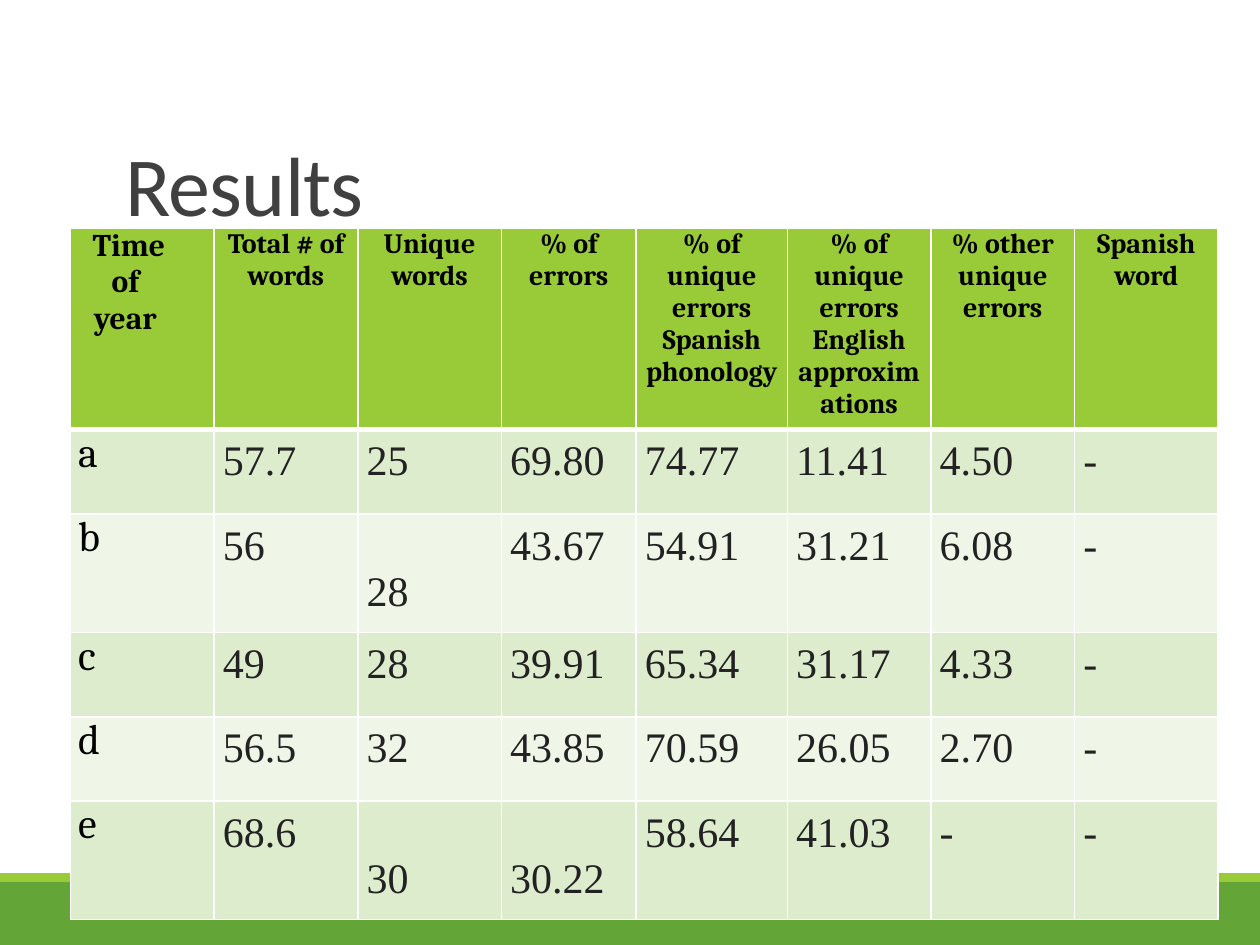
from lxml.etree import SubElement
from pptx import Presentation
from pptx.dml.color import RGBColor
from pptx.enum.shapes import MSO_SHAPE
from pptx.enum.text import MSO_ANCHOR, PP_ALIGN
from pptx.oxml.ns import qn
from pptx.util import Inches, Pt

COLORS = {
    "green": "63A537",
    "lime": "99CB38",
    "title": "404040",
    "black": "000000",
    "number": "222222",
    "odd": "DEECCE",
    "even": "EFF6E8",
    "border": "FFFFFF",
}
FORMATS = {
    "title": {"name": "Calibri", "size": Pt(48), "bold": False, "color": "title"},
    "corner": {"name": "Cambria", "size": Pt(18), "bold": True, "color": "black"},
    "header": {"name": "Cambria", "size": Pt(16), "bold": True, "color": "black"},
    "label": {"name": "Cambria", "size": Pt(24), "bold": False, "color": "black"},
    "number": {"name": "Times New Roman", "size": Pt(24), "bold": False, "color": "number"},
}
MARGINS = {
    "corner": (0.06, 0, 0.33, 0),
    "header": (0.06, 0, 0.06, 0),
    "label": (0.06, 0, 0.06, 0),
    "number": (0.07, 0.07, 0.07, 0.07),
}
HEADERS = [
    " Time of year",
    "Total # of words",
    "Unique words",
    "% of errors",
    "% of unique errors\nSpanish phonology",
    "% of unique errors English approximations",
    "% other unique errors",
    "Spanish word",
]
RESULTS = [
    ["a", "57.7", "25", "69.80", "74.77", "11.41", "4.50", "-"],
    ["b", "56", "28", "43.67", "54.91", "31.21", "6.08", "-"],
    ["c", "49", "28", "39.91", "65.34", "31.17", "4.33", "-"],
    ["d", "56.5", "32", "43.85", "70.59", "26.05", "2.70", "-"],
    ["e", "68.6", "30", "30.22", "58.64", "41.03", "-", "-"],
]
COLUMN_WIDTHS = [1.14, 1.14, 1.14, 1.07, 1.2, 1.14, 1.14, 1.14]
ROW_HEIGHTS = [1.27] + [0.67] * len(RESULTS)
DOUBLE_SPACED = {(2, 2), (5, 2), (5, 3)}


class SlideBuilder:
    """Holds the style and the current slide, and adds each kind of element."""

    def __init__(self, slide, colors, formats):
        self.slide = slide
        self.colors = colors
        self.formats = formats

    def rgb(self, color):
        return RGBColor.from_string(self.colors[color])

    def style(self, font, role):
        for attribute, value in self.formats[role].items():
            if attribute == "color":
                font.color.rgb = self.rgb(value)
            else:
                setattr(font, attribute, value)

    def band(self, top, height, color):
        shape = self.slide.shapes.add_shape(
            MSO_SHAPE.RECTANGLE, 0, Inches(top), Inches(10), Inches(height)
        )
        shape.shadow.inherit = False
        shape.fill.solid()
        shape.fill.fore_color.rgb = self.rgb(color)
        shape.line.fill.background()

    def title(self, text, left, top, width, height):
        box = self.slide.shapes.add_textbox(
            Inches(left), Inches(top), Inches(width), Inches(height)
        )
        frame = box.text_frame
        frame.word_wrap = True
        frame.vertical_anchor = MSO_ANCHOR.BOTTOM
        paragraph = frame.paragraphs[0]
        paragraph.line_spacing = 0.85
        run = paragraph.add_run()
        run.text = text
        self.style(run.font, "title")
        run.font._element.set("spc", "-50")

    def borders(self, cell, widths):
        properties = cell._tc.get_or_add_tcPr()
        for index, (side, width) in enumerate(widths.items()):
            line = SubElement(properties, qn(f"a:ln{side}"), w=str(Pt(width)))
            fill = SubElement(line, qn("a:solidFill"))
            SubElement(fill, qn("a:srgbClr"), val=self.colors["border"])
            properties.insert(index, line)

    def cell(self, cell, text, role, fill, spacing):
        margins = zip(("left", "top", "right", "bottom"), MARGINS[role])
        for side, margin in margins:
            setattr(cell, f"margin_{side}", Inches(margin))
        cell.fill.solid()
        cell.fill.fore_color.rgb = self.rgb(fill)
        cell.text = text
        centered = role in ("corner", "header")
        for paragraph in cell.text_frame.paragraphs:
            paragraph.alignment = PP_ALIGN.CENTER if centered else PP_ALIGN.LEFT
            if spacing:
                paragraph.line_spacing = spacing
            for run in paragraph.runs:
                self.style(run.font, role)

    def table(self, rows, left, top):
        table = self.slide.shapes.add_table(
            len(rows), len(COLUMN_WIDTHS), Inches(left), Inches(top),
            Inches(sum(COLUMN_WIDTHS)), Inches(sum(ROW_HEIGHTS)),
        ).table
        for column, width in zip(table.columns, COLUMN_WIDTHS):
            column.width = Inches(width)
        for row, height in zip(table.rows, ROW_HEIGHTS):
            row.height = Inches(height)
        for r, values in enumerate(rows):
            roles = ("corner", "header") if r == 0 else ("label", "number")
            fill = "lime" if r == 0 else "odd" if r % 2 else "even"
            widths = {"L": 1, "R": 1, "T": 3 if r == 1 else 1, "B": 3 if r == 0 else 1}
            for c, text in enumerate(values):
                cell = table.cell(r, c)
                spacing = 2.0 if (r, c) in DOUBLE_SPACED else None
                self.cell(cell, text, roles[min(c, 1)], fill, spacing)
                self.borders(cell, widths)


def main():
    presentation = Presentation()
    presentation.slide_width = Inches(10)
    presentation.slide_height = Inches(7.5)
    slide = presentation.slides.add_slide(presentation.slide_layouts[6])
    builder = SlideBuilder(slide, COLORS, FORMATS)
    builder.band(7, 0.5, "green")
    builder.band(6.93, 0.07, "lime")
    builder.title("Results", 0.9, 0.31, 8.25, 1.59)
    builder.table([HEADERS] + RESULTS, 0.56, 1.81)
    presentation.save("out.pptx")


if __name__ == "__main__":
    main()
